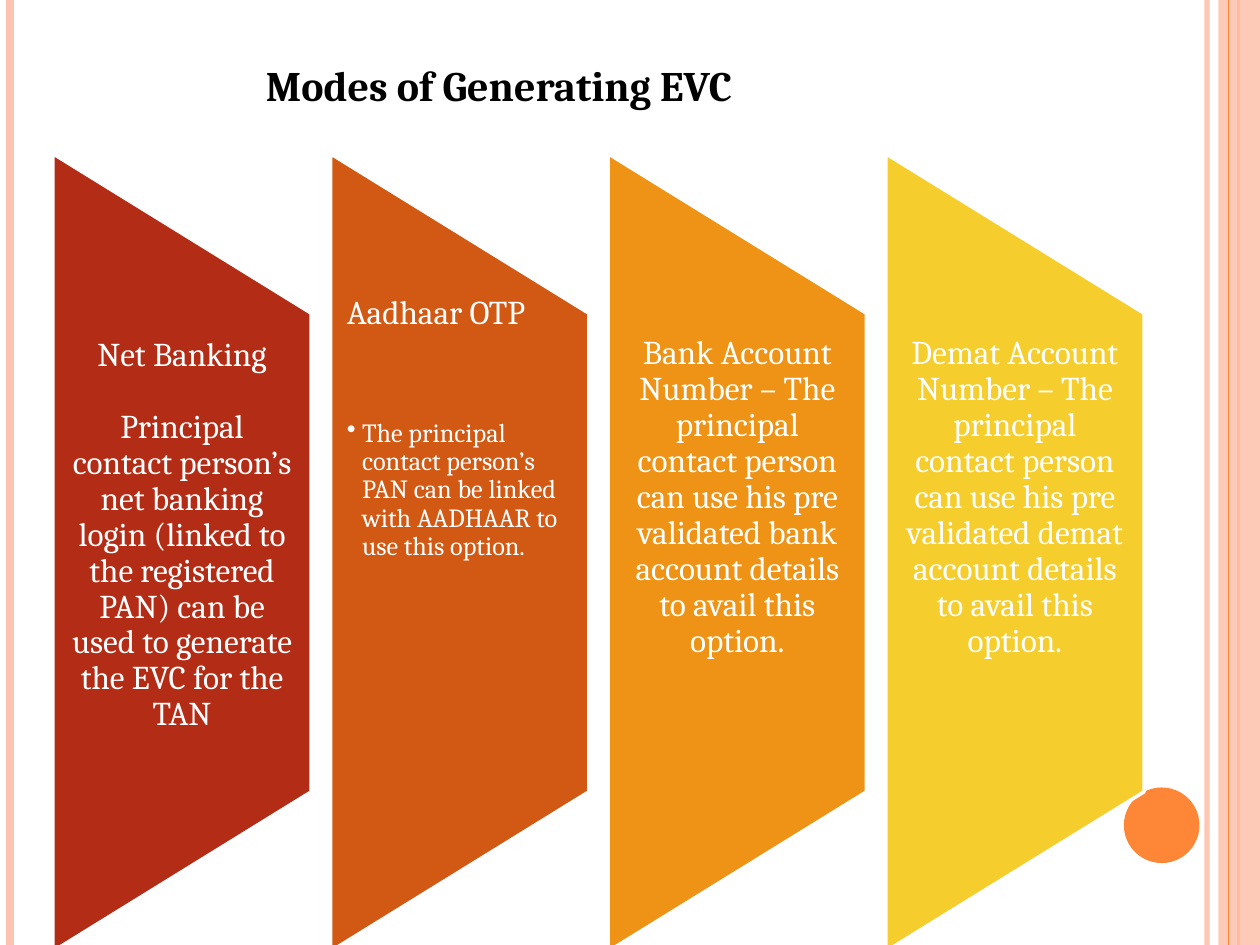
from pptx import Presentation, util as u
from pptx.dml.color import RGBColor
from pptx.enum import shapes, text
from pptx.oxml.ns import qn
from lxml import etree

FONT = "Cambria"
TITLE = "Modes of Generating EVC"
CENTER, LEFT = text.PP_ALIGN.CENTER, text.PP_ALIGN.LEFT
MIDDLE, TOP = text.MSO_ANCHOR.MIDDLE, text.MSO_ANCHOR.TOP

ACCOUNT = ("Bank Account Number – The principal contact person can use his pre "
           "validated bank account details to avail this option.")
# fill, anchor, bottom inset, paragraphs (text, size, alignment, space after, bullet)
PANELS = [
    ("B32C16", MIDDLE, 0, [
        ("Net Banking", 19, CENTER, 20.5, False),
        ("Principal contact person’s net banking login (linked to the registered "
         "PAN) can be used to generate the EVC for the TAN", 19, CENTER, 0, False)]),
    ("D25914", TOP, 0, [
        ("Aadhaar OTP", 19, LEFT, 50, False),
        ("The principal contact person’s PAN can be linked with AADHAAR to use "
         "this option.", 15, LEFT, 0, True)]),
    ("EE9316", MIDDLE, 0.6, [(ACCOUNT, 19, CENTER, 0, False)]),
    ("F5CD2D", MIDDLE, 0.6, [
        (ACCOUNT.replace("Bank", "Demat").replace("bank", "demat"), 19, CENTER, 0, False)]),
]
FIRST_X, LAST_X, CENTER_Y = 0.42, 7.03, 4.385
PANEL_W, PANEL_H = 2.05, 6.33
TEXT_Y, TEXT_H = 2.35, 3.8

# x, colour, width, opacity in percent
BACK_RULES = [(9.58, "FEC3AE", 3, 93), (0.08, "FEC3AE", 4.5, 100), (9.83, "FE8637", 1.5, 100)]
FRONT_RULES = [(9.75, "FE8637", 0.75, 100)]

prs = Presentation()
prs.slide_width, prs.slide_height = u.Inches(10), u.Inches(7.5)
s = prs.slides.add_slide(prs.slide_layouts[5])


def inches(*values):
    return [u.Inches(v) for v in values]


def rgb(value):
    return RGBColor.from_string(value)


def set_opacity(element, percent):
    if percent < 100:
        color = next(element.iter(qn("a:srgbClr")))
        etree.SubElement(color, qn("a:alpha")).set("val", str(percent * 1000))


def add_rule(x, color, width, opacity):
    line = s.shapes.add_connector(shapes.MSO_CONNECTOR.STRAIGHT, *inches(x, 0, x, 7.5))
    line.line.color.rgb, line.line.width = rgb(color), u.Pt(width)
    sp_pr = line._element.spPr
    set_opacity(sp_pr, opacity)
    etree.SubElement(sp_pr, qn("a:effectLst"))


def add_shape(kind, box, color, opacity=100):
    sp = s.shapes.add_shape(kind, *inches(*box))
    sp.shadow.inherit = False
    sp.fill.solid()
    sp.fill.fore_color.rgb = rgb(color)
    set_opacity(sp._element.spPr, opacity)
    sp.line.fill.background()
    return sp


def add_bullet(p):
    p_pr = p._p.get_or_add_pPr()
    p_pr.set("marL", str(u.Inches(0.12)))
    p_pr.set("indent", str(u.Inches(-0.12)))
    etree.SubElement(p_pr, qn("a:buChar")).set("char", "•")


def add_panel(x, color, anchor, bottom, paragraphs):
    left, top = x + (PANEL_W - PANEL_H) / 2, CENTER_Y - PANEL_W / 2
    sp = add_shape(shapes.MSO_SHAPE.FLOWCHART_MANUAL_OPERATION,
                   (left, top, PANEL_H, PANEL_W), color)
    sp.rotation = 270
    sp.line.color.rgb, sp.line.width = rgb("FFFFFF"), u.Pt(2)

    tf = s.shapes.add_textbox(*inches(x, TEXT_Y, PANEL_W, TEXT_H)).text_frame
    tf.word_wrap, tf.vertical_anchor = True, anchor
    tf.margin_left, tf.margin_top, tf.margin_right, tf.margin_bottom = inches(
        0.13, 0, 0.13, bottom)
    for i, (words, size, align, after, bullet) in enumerate(paragraphs):
        p = tf.add_paragraph() if i else tf.paragraphs[0]
        p.text, p.alignment = words, align
        p.line_spacing, p.space_after = 0.9, u.Pt(after)
        p.font.name, p.font.size = FONT, u.Pt(size)
        p.font.color.rgb = rgb("FFFFFF")
        if bullet:
            add_bullet(p)


for rule in BACK_RULES:
    add_rule(*rule)
add_shape(shapes.MSO_SHAPE.RECTANGLE, (9.67, 0, 0.33, 7.5), "FEC3AE", 87)
for rule in FRONT_RULES:
    add_rule(*rule)
add_shape(shapes.MSO_SHAPE.OVAL, (8.92, 6.25, 0.6, 0.6), "FE8637")

title = s.shapes.title
title.left, title.top, title.width, title.height = inches(0.75, 0.42, 6.42, 0.5)
tf = title.text_frame
tf.text, tf.vertical_anchor, tf.auto_size = TITLE, MIDDLE, text.MSO_AUTO_SIZE.NONE
p = tf.paragraphs[0]
p.alignment = CENTER
p.font.name, p.font.size, p.font.bold = FONT, u.Pt(24), True
p.font.color.rgb = rgb("000000")

step = (LAST_X - FIRST_X) / (len(PANELS) - 1)
for col, panel in enumerate(PANELS):
    add_panel(FIRST_X + col * step, *panel)

prs.save("out.pptx")
